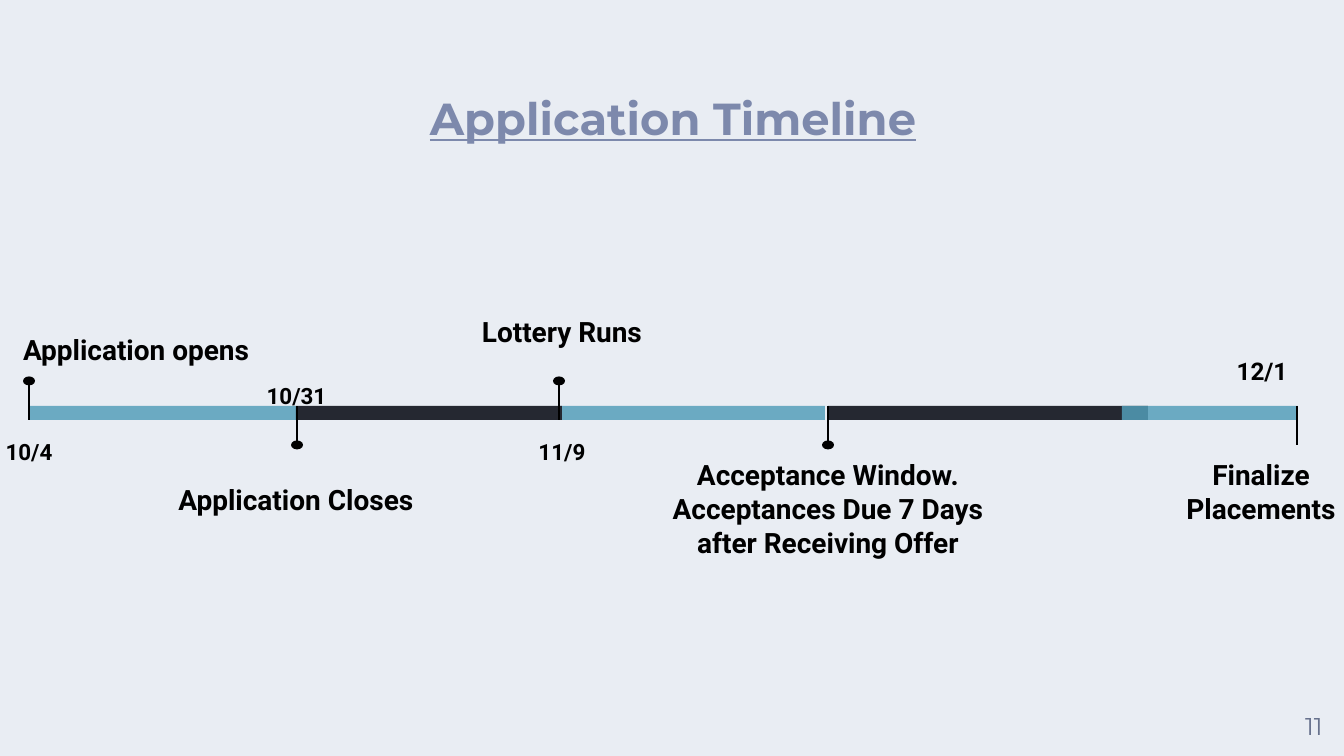
from pptx import Presentation
from pptx.dml.color import RGBColor
from pptx.enum.shapes import MSO_CONNECTOR as Line, MSO_SHAPE as Shape
from pptx.enum.text import MSO_ANCHOR as Anchor, PP_ALIGN as Align
from pptx.oxml.ns import qn
from pptx.util import Pt
from lxml.etree import SubElement


class Theme:
    background, title, number = "E9EDF3", "7D89AC", "68728D"
    light, dark, ink = "539EB9", "252831", "000000"
    light_alpha = 84
    heading_font, body_font = "Montserrat", "Roboto"
    title_size, label_size, date_size, number_size = 24, 15, 12, 13
    line_width = 0.75


# Content, lengths in px
PAGE = (1344, 756)
SCALE = 9144000 / PAGE[0]
INSET = 13

TITLE = ("Application Timeline", (320, 78, 706, 82))
NUMBER = ("11", (1284, 696, 60, 60))

BAR_TOP, BAR_HEIGHT = 406, 14
BARS = [  # left, width, colour
    (559, 266, Theme.light),
    (828, 320, Theme.dark),
    (30, 266, Theme.light),
    (296, 266, Theme.dark),
    (1122, 176, Theme.light),
]

PIN_REACH = 25
DOT = (12, 9)
PINS = [  # x, direction, has dot
    (29, "up", True),
    (297, "down", True),
    (559, "up", True),
    (828, "down", True),
    (1297, "down", False),
]

LABELS = [  # paragraphs, box, alignment
    (["Application opens"], (10, 320, 306, 60), Align.LEFT),
    (["Application Closes"], (143, 470, 306, 60), Align.CENTER),
    (["Lottery Runs"], (409, 302, 306, 60), Align.CENTER),
    (["Acceptance Window.", "Acceptances Due 7 Days after Receiving Offer"],
     (656, 445, 344, 95), Align.CENTER),
    (["Finalize Placements"], (1165, 445, 192, 95), Align.CENTER),
]

DATES = [  # text, box, size
    ("10/4", (-30, 421, 118, 40), Theme.date_size),
    ("10/31", (246, 365, 101, 40), Theme.date_size),
    ("11/9", (515, 421, 94, 40), Theme.date_size),
    ("12/1", (1207, 339, 110, 56), Theme.number_size),
]


def px(*lengths):
    return [round(length * SCALE) for length in lengths]


def paint(fill, colour):
    fill.solid()
    fill.fore_color.rgb = RGBColor.from_string(colour)


def write(box, lines, size, colour, font=Theme.body_font, align=Align.CENTER,
          bold=True, underline=None, spacing=None, inset=INSET, anchor=Anchor.TOP):
    frame = box.text_frame
    frame.word_wrap = True
    frame.vertical_anchor = anchor
    (frame.margin_left, frame.margin_top,
     frame.margin_right, frame.margin_bottom) = px(*[inset] * 4)
    for index, line in enumerate(lines):
        para = frame.add_paragraph() if index else frame.paragraphs[0]
        para.alignment = align
        para.line_spacing = spacing
        span = para.add_run()
        span.text = line
        span.font.name = font
        span.font.size = Pt(size)
        span.font.bold = bold
        span.font.underline = underline
        span.font.color.rgb = RGBColor.from_string(colour)


def add_solid(page, kind, place, colour):
    shape = page.shapes.add_shape(kind, *px(*place))
    shape.shadow.inherit = False
    shape.line.fill.background()
    paint(shape.fill, colour)
    return shape


def add_bar(page, left, width, colour):
    bar = add_solid(page, Shape.RECTANGLE, (left, BAR_TOP, width, BAR_HEIGHT), colour)
    if colour == Theme.light:
        tint = bar.fill._xPr.find(f"{qn('a:solidFill')}/{qn('a:srgbClr')}")
        SubElement(tint, qn("a:alpha"), val=str(Theme.light_alpha * 1000))


def add_pin(page, x, direction, has_dot):
    bottom = BAR_TOP + BAR_HEIGHT
    if direction == "up":
        tip, foot = BAR_TOP - PIN_REACH, bottom
    else:
        tip, foot = bottom + PIN_REACH, BAR_TOP
    stem = page.shapes.add_connector(Line.STRAIGHT, *px(x, tip, x, foot))
    stem.line.width = Pt(Theme.line_width)
    paint(stem.line.fill, Theme.ink)
    SubElement(stem._element.spPr, qn("a:effectLst"))
    if has_dot:
        width, height = DOT
        add_solid(page, Shape.OVAL,
                  (x - width / 2, tip - height / 2, width, height), Theme.ink)


def main():
    deck = Presentation()
    deck.slide_width, deck.slide_height = px(*PAGE)
    page = deck.slides.add_slide(deck.slide_layouts[5])
    paint(page.background.fill, Theme.background)

    # Title and page number
    text, place = TITLE
    title = page.shapes.title
    title.left, title.top, title.width, title.height = px(*place)
    write(title, [text], Theme.title_size, Theme.title,
          Theme.heading_font, underline=True)
    text, place = NUMBER
    write(page.shapes.add_textbox(*px(*place)), [text], Theme.number_size,
          Theme.number, Theme.heading_font, bold=False, inset=0,
          anchor=Anchor.MIDDLE)

    # Timeline
    for bar in BARS:
        add_bar(page, *bar)
    for pin in PINS:
        add_pin(page, *pin)

    # Milestones and dates
    for lines, place, align in LABELS:
        write(page.shapes.add_textbox(*px(*place)), lines, Theme.label_size,
              Theme.ink, align=align)
    for text, place, size in DATES:
        write(page.shapes.add_textbox(*px(*place)), [text], size,
              Theme.ink, spacing=1.15)

    deck.save("out.pptx")


if __name__ == "__main__":
    main()
